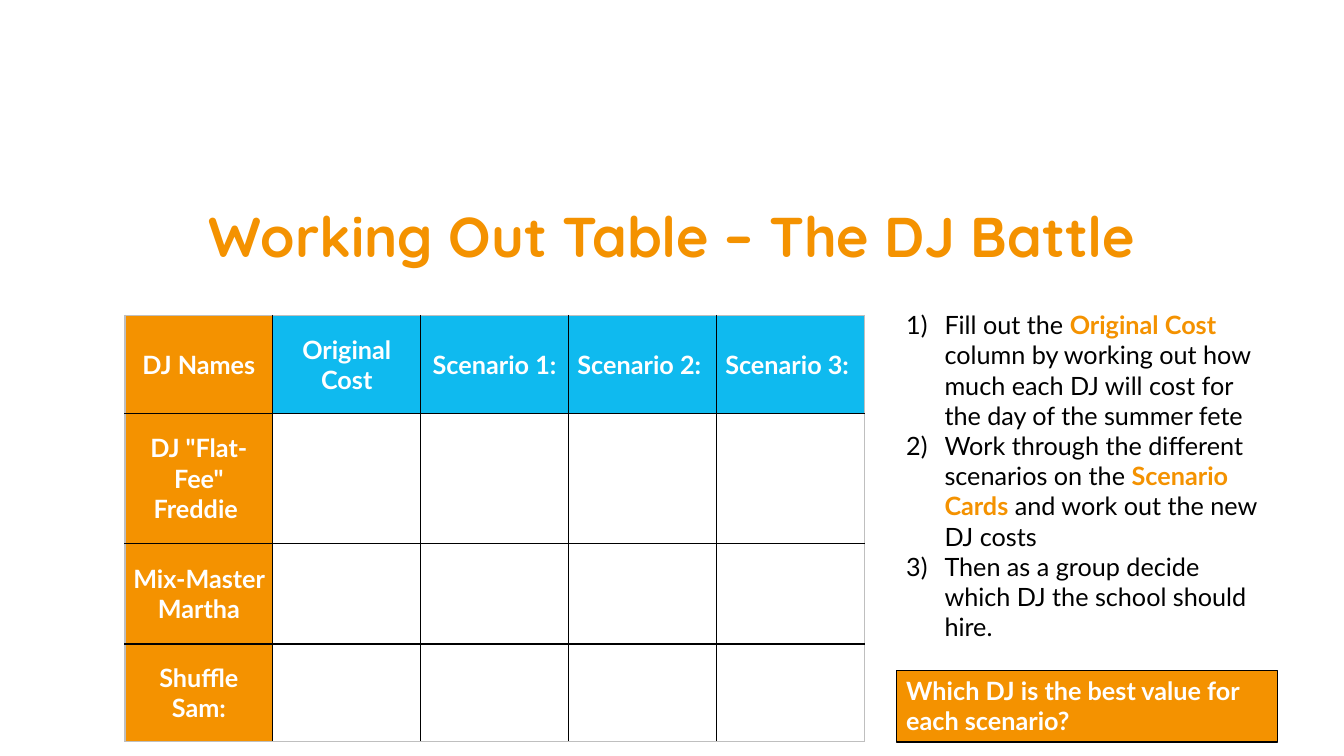
from dataclasses import dataclass

from lxml.etree import SubElement
from pptx import Presentation
from pptx.dml.color import RGBColor
from pptx.enum.shapes import MSO_SHAPE
from pptx.enum.text import MSO_ANCHOR, MSO_AUTO_SIZE, PP_ALIGN
from pptx.oxml.ns import qn
from pptx.util import Emu, Inches, Pt

ORANGE = RGBColor(0xF4, 0x92, 0x00)
BLUE = RGBColor(0x0F, 0xBA, 0xEF)
BLACK = RGBColor(0x00, 0x00, 0x00)
WHITE = RGBColor(0xFF, 0xFF, 0xFF)
GREY = RGBColor(0xBF, 0xBF, 0xBF)

SLIDE_WIDTH = Inches(13.33)
SLIDE_HEIGHT = Inches(7.5)


@dataclass(frozen=True)
class Area:
    """A rectangle in percent of the slide's width and height."""
    left: float
    top: float
    width: float
    height: float

    def box(self) -> tuple[Emu, Emu, Emu, Emu]:
        return (across(self.left), down(self.top),
                across(self.width), down(self.height))


@dataclass(frozen=True)
class Words:
    text: str
    color: RGBColor = BLACK
    bold: bool = False
    size: int = 18
    font: str = "Lato"


def across(percent: float) -> Emu:
    return Emu(round(SLIDE_WIDTH * percent / 100))


def down(percent: float) -> Emu:
    return Emu(round(SLIDE_HEIGHT * percent / 100))


TITLE_AREA = Area(2.55, 27.33, 94.9, 8.67)
STEPS_AREA = Area(66.69, 40.27, 28.36, 45.73)
TABLE_AREA = Area(9.3, 41.73, 55, 56.4)
QUESTION_AREA = Area(66.69, 88.67, 28.36, 9.47)
ROW_HEIGHTS = (12.93, 17.2, 13.33, 12.93)

TITLE = Words("Working Out Table – The DJ Battle", ORANGE, True, 40, "Quicksand")
QUESTION = Words("Which DJ is the best value for each scenario?", WHITE, True)
HEADINGS = ("DJ Names", "Original Cost", "Scenario 1:", "Scenario 2: ", "Scenario 3: ")
DJ_NAMES = ('DJ "Flat-Fee" Freddie ', "Mix-Master Martha", "Shuffle Sam:")
STEPS = (
    (Words("Fill out the "), Words("Original Cost ", ORANGE, True),
     Words("column by working out how much each DJ will cost for the day of the summer fete")),
    (Words("Work through the different scenarios on the "),
     Words("Scenario Cards", ORANGE, True),
     Words(" and work out the new DJ costs")),
    (Words("Then as a group decide which DJ the school should hire."),),
)


def write(paragraph, *pieces: Words) -> None:
    for piece in pieces:
        run = paragraph.add_run()
        run.text = piece.text
        run.font.name = piece.font
        run.font.size = Pt(piece.size)
        run.font.bold = piece.bold
        run.font.color.rgb = piece.color


def add_title(slide) -> None:
    frame = slide.shapes.add_textbox(*TITLE_AREA.box()).text_frame
    frame.word_wrap = True
    frame.vertical_anchor = MSO_ANCHOR.MIDDLE
    heading = frame.paragraphs[0]
    heading.alignment = PP_ALIGN.CENTER
    heading.line_spacing = 0.9
    write(heading, TITLE)


def number(paragraph) -> None:
    """Give the paragraph a hanging number such as 1)."""
    properties = paragraph._p.get_or_add_pPr()
    indent = Inches(0.38)
    properties.set("marL", str(indent))
    properties.set("indent", str(-indent))
    SubElement(properties, qn("a:buFont"), typeface="+mj-lt")
    SubElement(properties, qn("a:buAutoNum"), type="arabicParenR")


def add_steps(slide) -> None:
    frame = slide.shapes.add_textbox(*STEPS_AREA.box()).text_frame
    frame.word_wrap = True
    frame.auto_size = MSO_AUTO_SIZE.SHAPE_TO_FIT_TEXT
    for index, step in enumerate(STEPS):
        paragraph = frame.add_paragraph() if index else frame.paragraphs[0]
        number(paragraph)
        write(paragraph, *step)


def set_border(cell, side: str, color: RGBColor) -> None:
    line = SubElement(cell._tc.get_or_add_tcPr(), qn(f"a:ln{side}"), w=str(Pt(1)))
    fill = SubElement(line, qn("a:solidFill"))
    SubElement(fill, qn("a:srgbClr"), val=str(color))


def add_costs_table(slide) -> None:
    last_row, last_column = len(DJ_NAMES), len(HEADINGS) - 1
    table = slide.shapes.add_table(
        last_row + 1, last_column + 1, *TABLE_AREA.box()).table
    table.first_row = False
    table.horz_banding = False
    for column in table.columns:
        column.width = across(TABLE_AREA.width / len(HEADINGS))
    for row, height in zip(table.rows, ROW_HEIGHTS):
        row.height = down(height)

    labels = {(0, column): text for column, text in enumerate(HEADINGS)}
    labels |= {(row, 0): text for row, text in enumerate(DJ_NAMES, 1)}
    for row in range(last_row + 1):
        for column in range(last_column + 1):
            cell = table.cell(row, column)
            outer_sides = {"L": column == 0, "R": column == last_column,
                           "T": row == 0, "B": row == last_row}
            for side, is_outer in outer_sides.items():
                set_border(cell, side, GREY if is_outer else BLACK)
            if (row, column) not in labels:
                cell.fill.background()
                continue
            cell.fill.solid()
            cell.fill.fore_color.rgb = BLUE if column else ORANGE
            cell.vertical_anchor = MSO_ANCHOR.MIDDLE
            cell.margin_left = cell.margin_right = Inches(0.07)
            cell.margin_top = cell.margin_bottom = 0
            label = cell.text_frame.paragraphs[0]
            label.alignment = PP_ALIGN.CENTER
            write(label, Words(labels[row, column], WHITE, True))


def add_question(slide) -> None:
    banner = slide.shapes.add_shape(MSO_SHAPE.RECTANGLE, *QUESTION_AREA.box())
    banner.shadow.inherit = False
    banner.fill.solid()
    banner.fill.fore_color.rgb = ORANGE
    banner.line.color.rgb = BLACK
    banner.line.width = Pt(1)
    frame = banner.text_frame
    frame.word_wrap = True
    frame.auto_size = MSO_AUTO_SIZE.SHAPE_TO_FIT_TEXT
    frame.vertical_anchor = MSO_ANCHOR.TOP
    frame.paragraphs[0].alignment = PP_ALIGN.LEFT
    write(frame.paragraphs[0], QUESTION)


def main() -> None:
    presentation = Presentation()
    presentation.slide_width = SLIDE_WIDTH
    presentation.slide_height = SLIDE_HEIGHT
    slide = presentation.slides.add_slide(presentation.slide_layouts[6])
    add_title(slide)
    add_steps(slide)
    add_costs_table(slide)
    add_question(slide)
    presentation.save("out.pptx")


if __name__ == "__main__":
    main()
